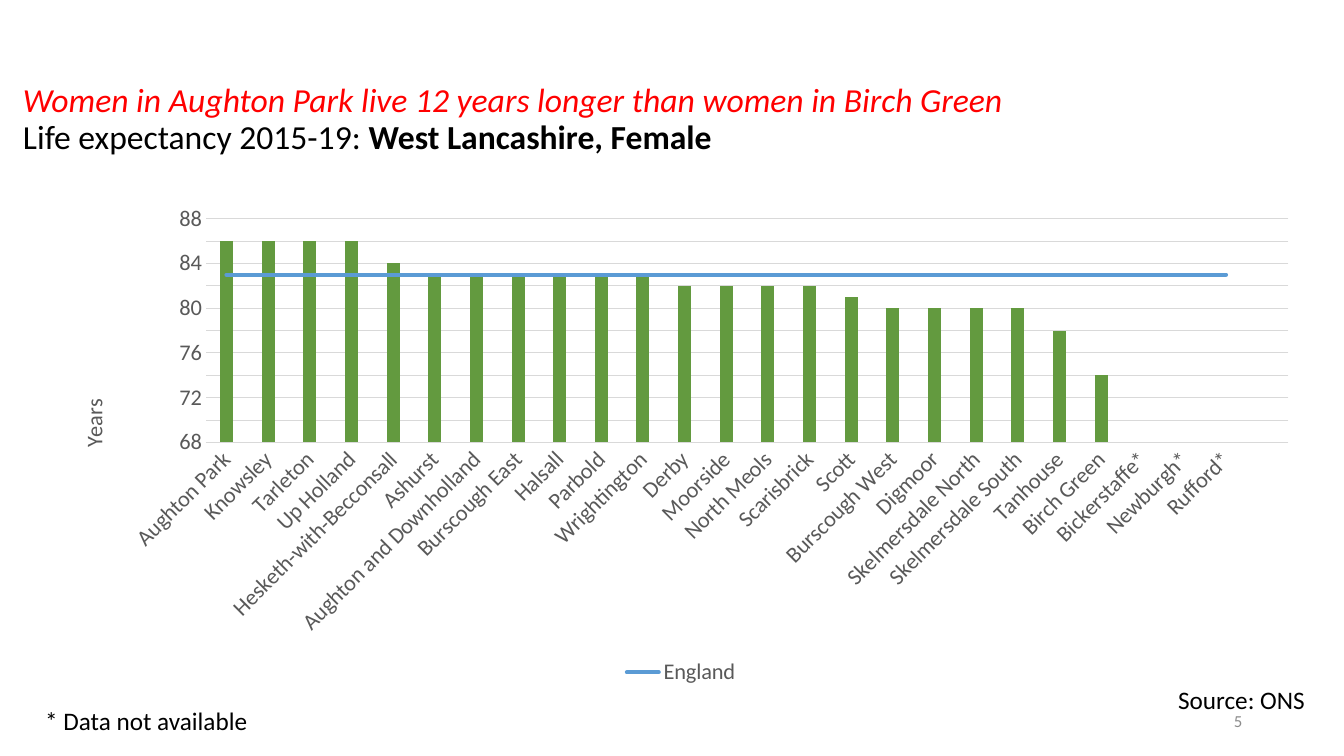
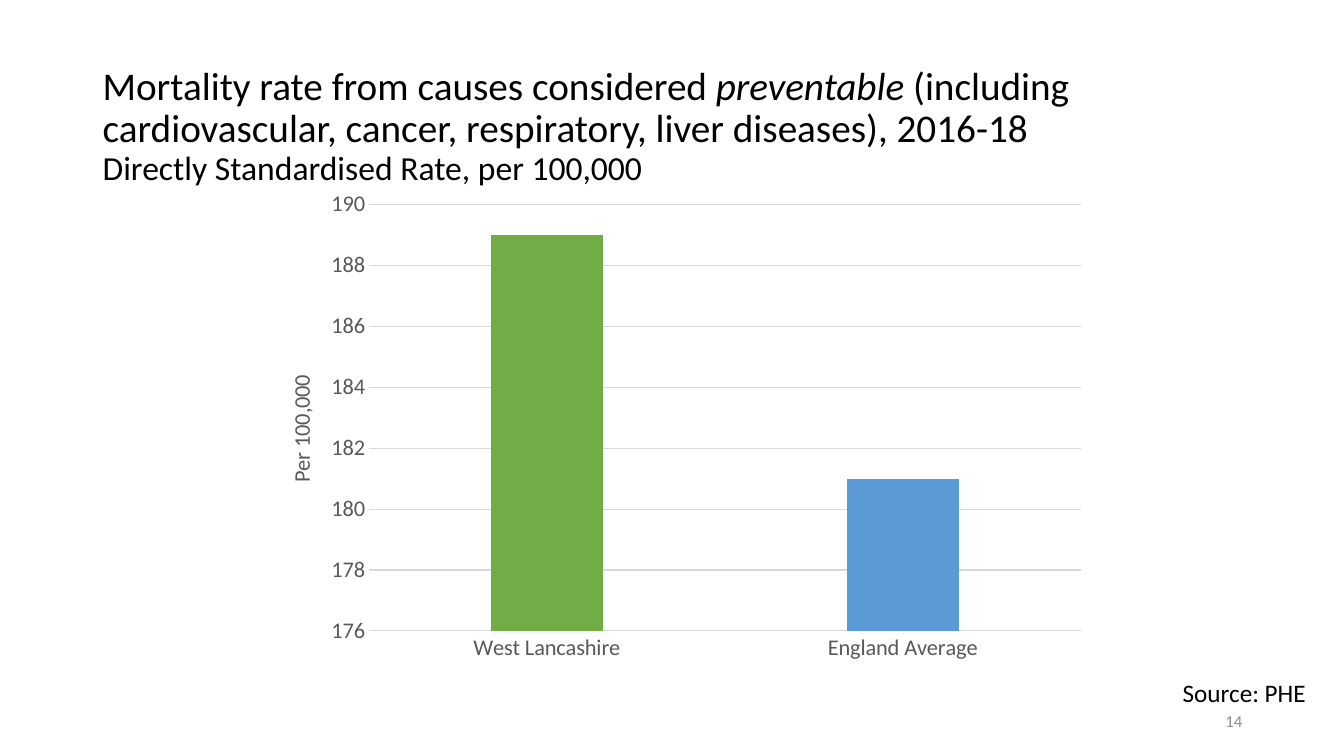
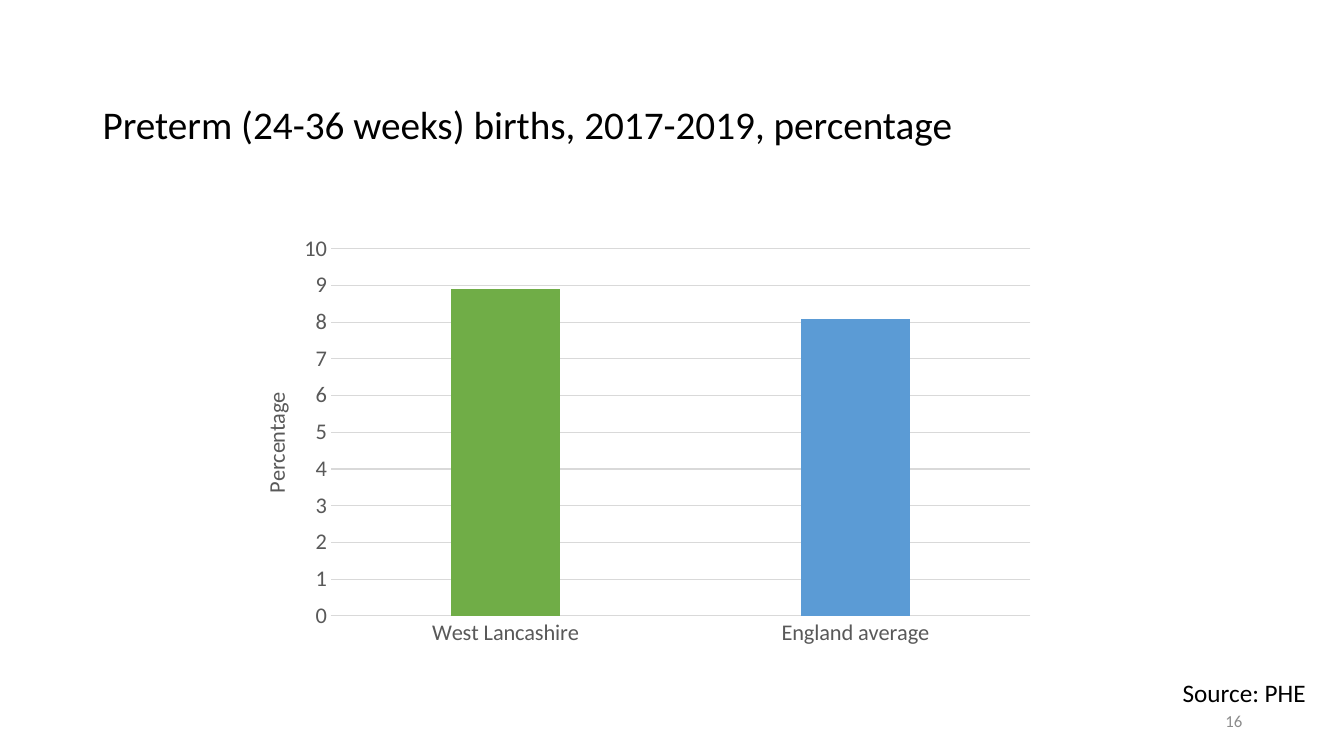
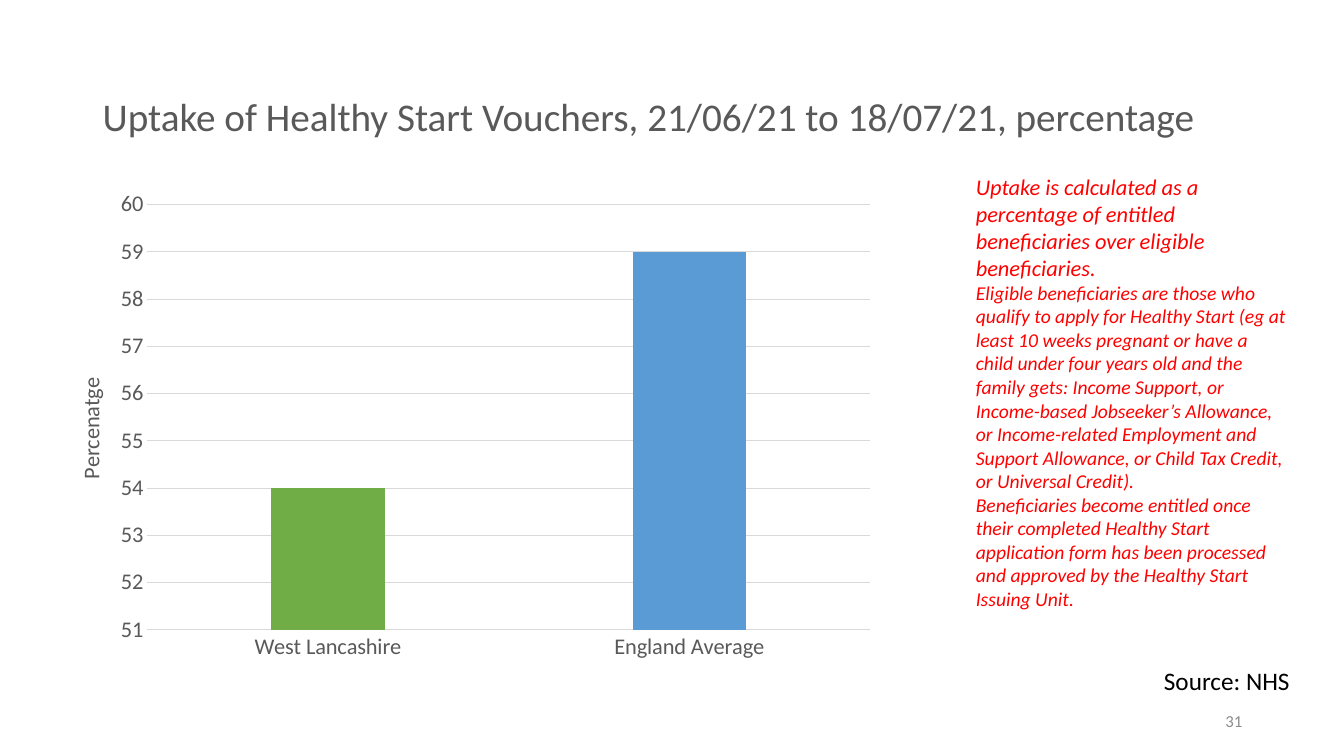
from lxml import etree
from pptx import Presentation
from pptx.chart.data import CategoryChartData
from pptx.dml.color import RGBColor
from pptx.enum.chart import XL_CHART_TYPE, XL_LEGEND_POSITION, XL_MARKER_STYLE, XL_TICK_MARK
from pptx.enum.text import MSO_ANCHOR, MSO_AUTO_SIZE, PP_ALIGN
from pptx.oxml.ns import qn
from pptx.oxml.xmlchemy import OxmlElement
from pptx.util import Inches, Pt

COLUMNS = XL_CHART_TYPE.COLUMN_CLUSTERED
LEGEND_BOTTOM = XL_LEGEND_POSITION.BOTTOM
NO_MARKER = XL_MARKER_STYLE.NONE
NO_TICK = XL_TICK_MARK.NONE
TOP, MIDDLE = MSO_ANCHOR.TOP, MSO_ANCHOR.MIDDLE
LEFT, RIGHT = PP_ALIGN.LEFT, PP_ALIGN.RIGHT
GROW = MSO_AUTO_SIZE.SHAPE_TO_FIT_TEXT

BLACK = RGBColor(0x00, 0x00, 0x00)
RED = RGBColor(0xFF, 0x00, 0x00)
GREY = RGBColor(0x59, 0x59, 0x59)
PAGE_GREY = RGBColor(0x8C, 0x8C, 0x8C)
GRID_GREY = RGBColor(0xD9, 0xD9, 0xD9)
GREEN = RGBColor(0x70, 0xAD, 0x47)
DARK_GREEN = RGBColor(0x63, 0x9A, 0x3F)
BLUE = RGBColor(0x5B, 0x9B, 0xD5)

WARD_GROUPS = [
    (86, ["Aughton Park", "Knowsley", "Tarleton", "Up Holland"]),
    (84, ["Hesketh-with-Becconsall"]),
    (83, ["Ashurst", "Aughton and Downholland", "Burscough East", "Halsall", "Parbold",
          "Wrightington"]),
    (82, ["Derby", "Moorside", "North Meols", "Scarisbrick"]),
    (81, ["Scott"]),
    (80, ["Burscough West", "Digmoor", "Skelmersdale North", "Skelmersdale South"]),
    (78, ["Tanhouse"]),
    (74, ["Birch Green"]),
    (None, ["Bickerstaffe*", "Newburgh*", "Rufford*"]),
]


def add_element(parent, tag, value=None):
    element = etree.SubElement(parent, qn(tag))
    if value is not None:
        element.set("val", str(value))
    return element


def place(layout, frame, **lengths):
    for old in list(layout):
        layout.remove(old)
    manual = add_element(layout, "c:manualLayout")
    if "w" in lengths:
        add_element(manual, "c:layoutTarget", "inner")
    for name in ("x", "y"):
        add_element(manual, f"c:{name}Mode", "edge")
    left, top, width, height = frame
    origin = {"x": (left, width), "y": (top, height), "w": (0, width), "h": (0, height)}
    for name, length in lengths.items():
        start, full = origin[name]
        add_element(manual, f"c:{name}", round((length - start) / full, 4))


class Deck:
    font = "Calibri"

    def __init__(self):
        self.deck = Presentation()
        self.deck.slide_width = Inches(13.33)
        self.deck.slide_height = Inches(7.5)
        self.page = None

    def style(self, font, size, color, bold=False, italic=False):
        font.name, font.size = self.font, Pt(size)
        font.bold, font.italic = bold, italic
        font.color.rgb = color

    def text(self, frame, paragraphs, align=LEFT, anchor=TOP, spacing=1.0, grow=False):
        box = self.page.shapes.add_textbox(*map(Inches, frame))
        body = box.text_frame
        body.word_wrap = True
        body.vertical_anchor = anchor
        if grow:
            body.auto_size = GROW
        for index, spans in enumerate(paragraphs):
            para = body.add_paragraph() if index else body.paragraphs[0]
            para.alignment = align
            para.line_spacing = spacing
            for words, size, color, *emphasis in spans:
                if words == "\n":
                    para.add_line_break()
                    continue
                span = para.add_run()
                span.text = words
                self.style(span.font, size, color, "bold" in emphasis, "italic" in emphasis)

    def start(self, number, spans, left=0.92, top=0.72, spacing=0.9):
        self.page = self.deck.slides.add_slide(self.deck.slide_layouts[6])
        self.text((left, top, 11.5, 1.08), [spans], anchor=MIDDLE, spacing=spacing)
        self.text((9.42, 6.95, 3, 0.4), [[(str(number), 12, PAGE_GREY)]], RIGHT, MIDDLE)

    def source(self, name, right=13.05, top=6.67):
        self.text((right - 2.53, top, 2.53, 0.4), [[(f"Source: {name}", 18, BLACK)]],
                  RIGHT, grow=True)

    def chart(self, frame, plot_frame, title, title_at, categories, series, scale):
        data = CategoryChartData()
        data.categories = categories
        for name, values in series:
            data.add_series(name, values)
        chart = self.page.shapes.add_chart(COLUMNS, *map(Inches, frame), data).chart
        chart.has_title = chart.has_legend = False
        self.style(chart.font, 16, BLACK)

        plot = chart.plots[0]
        plot.gap_width, plot.overlap = 219, -27
        plot.vary_by_categories = False

        category_axis, value_axis = chart.category_axis, chart.value_axis
        for axis in (category_axis, value_axis):
            axis.major_tick_mark = axis.minor_tick_mark = NO_TICK
            self.style(axis.tick_labels.font, 16, GREY)
        value_axis.minimum_scale, value_axis.maximum_scale, value_axis.major_unit = scale
        value_axis.tick_labels.number_format = "0"
        value_axis.tick_labels.number_format_is_linked = False
        value_axis.format.line.fill.background()
        value_axis.has_major_gridlines = True
        for line in (category_axis.format.line, value_axis.major_gridlines.format.line):
            line.color.rgb = GRID_GREY
            line.width = Pt(0.75)

        span = value_axis.axis_title.text_frame.paragraphs[0].add_run()
        span.text = title
        self.style(span.font, 16, GREY)
        title_element = value_axis.axis_title._element
        title_text = title_element.find(qn("c:tx"))
        title_text.find(qn("c:rich")).find(qn("a:bodyPr")).set("rot", "-5400000")
        layout = title_element.find(qn("c:layout"))
        if layout is None:
            layout = OxmlElement("c:layout")
            title_text.addnext(layout)
        place(layout, frame, x=title_at[0], y=title_at[1])

        area = chart._chartSpace.chart.plotArea
        layout = area.find(qn("c:layout"))
        if layout is None:
            layout = OxmlElement("c:layout")
            area.insert(0, layout)
        left, top, width, height = plot_frame
        place(layout, frame, x=left, y=top, w=width, h=height)
        return chart

    def comparison(self, frame, plot_frame, title, title_at, categories, values, scale):
        chart = self.chart(frame, plot_frame, title, title_at, categories,
                           [("Series 1", values)], scale)
        bars = chart.plots[0].series[0]
        for fill, color in ((bars.format.fill, GREEN), (bars.points[1].format.fill, BLUE)):
            fill.solid()
            fill.fore_color.rgb = color

    def benchmark(self, chart):
        bars = chart.plots[0].series[0]
        bars.format.fill.solid()
        bars.format.fill.fore_color.rgb = DARK_GREEN

        columns = chart._chartSpace.chart.plotArea.find(qn("c:barChart"))
        moved = columns.findall(qn("c:ser"))[1]
        for invert in moved.findall(qn("c:invertIfNegative")):
            moved.remove(invert)
        lines = OxmlElement("c:lineChart")
        add_element(lines, "c:grouping", "standard")
        add_element(lines, "c:varyColors", 0)
        lines.append(moved)
        add_element(lines, "c:marker", 1)
        for axis_id in columns.findall(qn("c:axId")):
            add_element(lines, "c:axId", axis_id.get("val"))
        columns.addnext(lines)

        average = chart.plots[1].series[0]
        average.smooth = False
        average.marker.style = NO_MARKER
        average.format.line.color.rgb = BLUE
        average.format.line.width = Pt(3)
        moved.find(qn("c:spPr")).find(qn("a:ln")).set("cap", "rnd")

        chart.has_legend = True
        chart.legend.position = LEGEND_BOTTOM
        chart.legend.include_in_layout = False
        self.style(chart.legend.font, 16, GREY)
        entry = OxmlElement("c:legendEntry")
        add_element(entry, "c:idx", 0)
        add_element(entry, "c:delete", 1)
        chart.legend._element.find(qn("c:legendPos")).addnext(entry)

        labels = chart.category_axis._element.find(qn("c:txPr"))
        labels.find(qn("a:bodyPr")).set("rot", "-2700000")


def life_expectancy(deck):
    deck.start(5, [
        ("Women in Aughton Park live 12 years longer than women in Birch Green", 24, RED, "italic"),
        ("\n", 24, BLACK),
        ("Life expectancy 2015-19: ", 24, BLACK),
        ("West Lancashire, Female", 24, BLACK, "bold"),
    ], left=0.13, top=0.65)
    deck.source("ONS", right=13.04, top=6.74)
    wards = [ward for _, group in WARD_GROUPS for ward in group]
    years = [value for value, group in WARD_GROUPS for _ in group]
    chart = deck.chart((0.47, 1.94, 12.57, 4.91), (2.04, 2.17, 10.74, 2.22), "Years", (0.74, 3.92),
                       wards + [""],
                       [("Series 1", years + [None]), ("England", [83] * len(wards) + [None])],
                       (68, 88, 2))
    deck.benchmark(chart)
    deck.text((0.35, 6.95, 3.57, 0.4), [[("* Data not available", 18, BLACK)]], grow=True)


def preventable_mortality(deck):
    deck.start(14, [
        ("Mortality rate from causes considered ", 28, BLACK),
        ("preventable", 28, BLACK, "italic"),
        (" (including cardiovascular, cancer, respiratory, liver diseases), 2016-18", 28, BLACK),
        ("\n", 28, BLACK),
        ("Directly Standardised Rate, per 100,000", 24, BLACK),
    ])
    deck.source("PHE")
    deck.comparison((2.54, 1.8, 8.35, 4.87), (3.66, 2.03, 7.06, 4.23), "Per 100,000", (2.8, 3.68),
                    ["West Lancashire", "England Average"], [189, 181], (176, 190, 2))


def preterm_births(deck):
    deck.start(16, [("Preterm (24-36 weeks) births, 2017-2019, percentage", 28, BLACK)])
    deck.source("PHE")
    deck.comparison((2.28, 2.25, 8.1, 4.26), (3.28, 2.47, 6.94, 3.64), "Percentage", (2.55, 3.85),
                    ["West Lancashire", "England average"], [8.9, 8.1], (0, 10, 1))


def voucher_uptake(deck):
    deck.start(31, [
        ("Uptake of Healthy Start Vouchers, 21/06/21 to 18/07/21, percentage", 28, GREY),
    ], top=0.61, spacing=1.0)
    deck.source("NHS", right=12.89, top=6.55)
    deck.comparison((0.44, 1.8, 8.35, 4.86), (1.46, 2.03, 7.17, 4.22), "Percenatge", (0.71, 3.71),
                    ["West Lancashire", "England Average"], [54, 59], (51, 60, 1))
    notes = [
        ("Uptake is calculated as a percentage of entitled beneficiaries over eligible "
         "beneficiaries.", 16),
        ("Eligible beneficiaries are those who qualify to apply for Healthy Start (eg at least "
         "10 weeks pregnant or have a child under four years old and the family gets: Income "
         "Support, or Income-based Jobseeker’s Allowance, or Income-related Employment and "
         "Support Allowance, or Child Tax Credit, or Universal Credit).", 14),
        ("Beneficiaries become entitled once their completed Healthy Start application form has "
         "been processed and approved by the Healthy Start Issuing Unit.", 14),
    ]
    deck.text((9.58, 1.67, 3.31, 4.48),
              [[(words, size, RED, "italic")] for words, size in notes], grow=True)


def main():
    deck = Deck()
    for build in (life_expectancy, preventable_mortality, preterm_births, voucher_uptake):
        build(deck)
    deck.deck.save("out.pptx")


if __name__ == "__main__":
    main()
